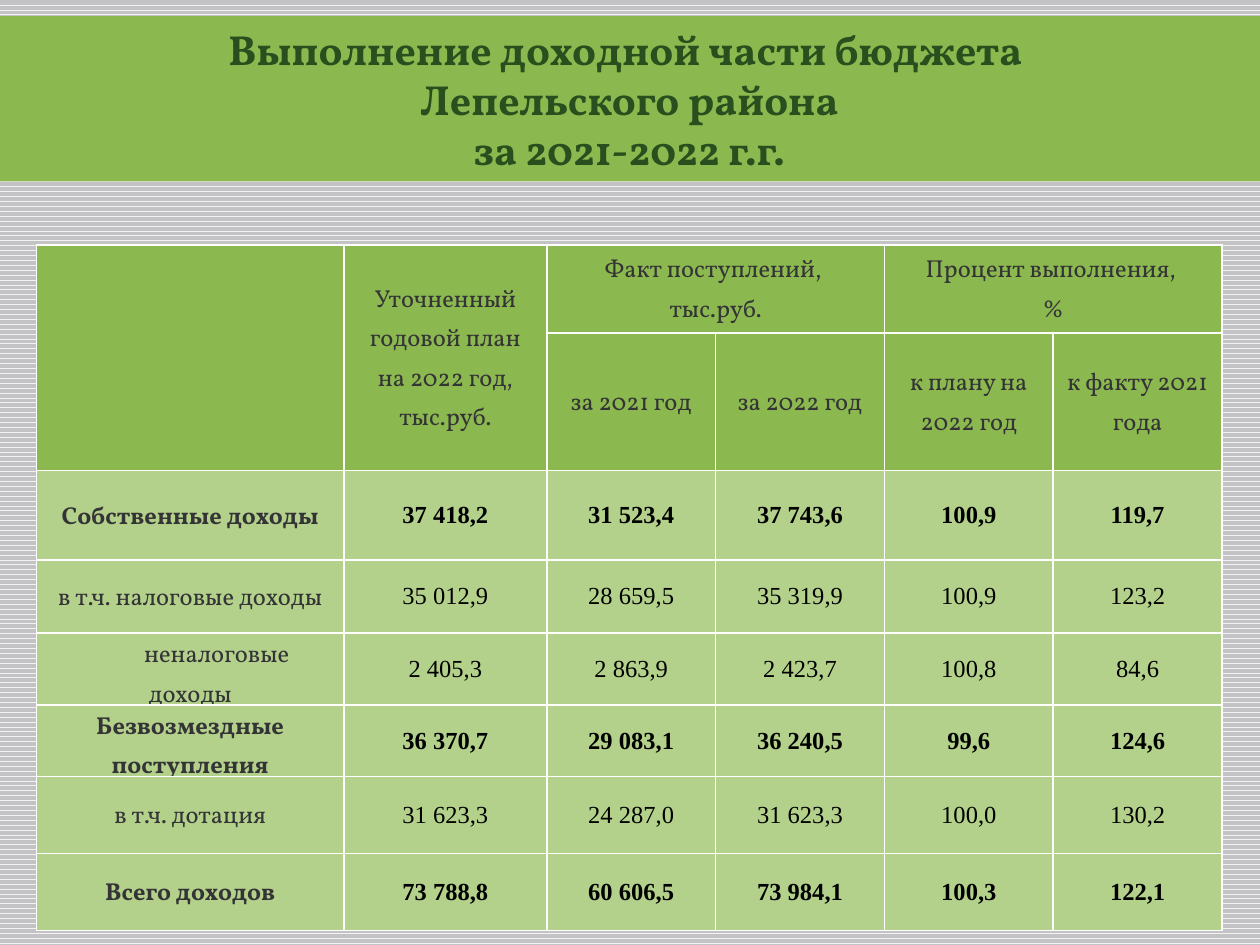
from dataclasses import dataclass
from typing import NamedTuple

from lxml.etree import SubElement
from pptx import Presentation
from pptx.dml.color import RGBColor
from pptx.enum.dml import MSO_PATTERN
from pptx.enum.shapes import MSO_SHAPE
from pptx.enum.text import MSO_ANCHOR, MSO_AUTO_SIZE, PP_ALIGN
from pptx.oxml.ns import qn
from pptx.util import Inches, Pt


@dataclass(frozen=True)
class Theme:
    green: str = "8CB94F"
    light_green: str = "B3D18B"
    title_ink: str = "284F1D"
    label_ink: str = "343436"
    number_ink: str = "000000"
    border: str = "FFFFFF"
    stripe: str = "F2F2F2"
    backdrop: str = "C3C2C5"
    text_font: str = "Vollkorn"
    number_font: str = "Times New Roman"
    title_size: int = 24
    table_size: int = 14
    table_spacing: float = 1.15


class Heading(NamedTuple):
    row: int
    column: int
    rows: int
    columns: int
    lines: tuple[str, ...]


class Income(NamedTuple):
    label: str
    values: tuple[str, ...]
    bold: bool = False
    indent: float = 0


THEME = Theme()
WIDTH, HEIGHT = 10, 7.5
COLUMNS = [2.44, 1.61] + [1.34] * 4
ROWS = [0.7, 1.04, 0.71, 0.58, 0.57, 0.57, 0.61, 0.61]
HEADER_ROWS = 2

TITLE = ("Выполнение доходной части бюджета ", "Лепельского района", "за 2021-2022 г.г.")
HEADINGS = [
    Heading(0, 0, 2, 1, ()),
    Heading(0, 1, 2, 1, ("Уточненный годовой план на 2022 год, тыс.руб.",)),
    Heading(0, 2, 1, 2, ("Факт поступлений, ", "тыс.руб.")),
    Heading(0, 4, 1, 2, ("Процент выполнения, ", "%")),
    Heading(1, 2, 1, 1, ("за 2021 год",)),
    Heading(1, 3, 1, 1, ("за 2022 год",)),
    Heading(1, 4, 1, 1, ("к плану на 2022 год",)),
    Heading(1, 5, 1, 1, ("к факту 2021 года",)),
]
INCOMES = [
    Income("Собственные доходы", ("37 418,2", "31 523,4", "37 743,6", "100,9", "119,7"), bold=True),
    Income("в т.ч. налоговые доходы", ("35 012,9", "28 659,5", "35 319,9", "100,9", "123,2")),
    Income("неналоговые доходы", ("2 405,3", "2 863,9", "2 423,7", "100,8", "84,6"), indent=0.42),
    Income("Безвозмездные поступления", ("36 370,7", "29 083,1", "36 240,5", "99,6", "124,6"), bold=True),
    Income("в т.ч. дотация", ("31 623,3", "24 287,0", "31 623,3", "100,0", "130,2")),
    Income("Всего доходов", ("73 788,8", "60 606,5", "73 984,1", "100,3", "122,1"), bold=True),
]


def rgb(color: str) -> RGBColor:
    return RGBColor.from_string(color)


def write(frame, *lines: str, font: str = THEME.text_font, size: int = THEME.table_size,
          color: str = THEME.label_ink, bold: bool = False, spacing: float = 1.0,
          indent: float = 0) -> None:
    for number, line in enumerate(lines):
        paragraph = frame.paragraphs[0] if number == 0 else frame.add_paragraph()
        paragraph.alignment = PP_ALIGN.CENTER
        paragraph.line_spacing = spacing
        if indent:
            paragraph._p.get_or_add_pPr().set("indent", str(Inches(indent)))
        run = paragraph.add_run()
        run.text = line
        run.font.name, run.font.size, run.font.bold = font, Pt(size), bold
        run.font.color.rgb = rgb(color)


def style_cell(cell, fill: str) -> None:
    cell.vertical_anchor = MSO_ANCHOR.MIDDLE
    cell.margin_top = cell.margin_bottom = Inches(0.01)
    properties = cell._tc.get_or_add_tcPr()
    for side in ("a:lnL", "a:lnR", "a:lnT", "a:lnB"):
        line = SubElement(properties, qn(side), w=str(Pt(1)))
        solid = SubElement(line, qn("a:solidFill"))
        SubElement(solid, qn("a:srgbClr"), val=THEME.border)
    cell.fill.solid()
    cell.fill.fore_color.rgb = rgb(fill)


def draw_background(slide) -> None:
    fill = slide.background.fill
    fill.patterned()
    fill.pattern = MSO_PATTERN.WAVE
    fill.fore_color.rgb = rgb(THEME.stripe)
    fill.back_color.rgb = rgb(THEME.backdrop)


def draw_title(slide) -> None:
    banner = slide.shapes.add_shape(
        MSO_SHAPE.RECTANGLE, Inches(-0.001 * WIDTH), Inches(0.017 * HEIGHT),
        Inches(1.001 * WIDTH), Inches(0.175 * HEIGHT))
    banner.shadow.inherit = False
    banner.fill.solid()
    banner.fill.fore_color.rgb = rgb(THEME.green)
    banner.line.fill.background()
    frame = banner.text_frame
    frame.word_wrap = True
    frame.auto_size = MSO_AUTO_SIZE.SHAPE_TO_FIT_TEXT
    write(frame, *TITLE, size=THEME.title_size, color=THEME.title_ink, bold=True)


def draw_table(slide) -> None:
    table = slide.shapes.add_table(
        len(ROWS), len(COLUMNS), Inches(0.029 * WIDTH), Inches(0.259 * HEIGHT),
        Inches(sum(COLUMNS)), Inches(sum(ROWS))).table
    for column, width in zip(table.columns, COLUMNS):
        column.width = Inches(width)
    for number, (row, height) in enumerate(zip(table.rows, ROWS)):
        row.height = Inches(height)
        for cell in row.cells:
            style_cell(cell, THEME.green if number < HEADER_ROWS else THEME.light_green)

    # Header cells, some spanning two rows or columns
    for heading in HEADINGS:
        cell = table.cell(heading.row, heading.column)
        if heading.rows * heading.columns > 1:
            cell.merge(table.cell(heading.row + heading.rows - 1,
                                  heading.column + heading.columns - 1))
        write(cell.text_frame, *heading.lines, spacing=THEME.table_spacing)

    # Income rows: a label and its figures
    for row, income in enumerate(INCOMES, start=HEADER_ROWS):
        write(table.cell(row, 0).text_frame, income.label, bold=income.bold,
              spacing=THEME.table_spacing, indent=income.indent)
        for column, value in enumerate(income.values, start=1):
            cell = table.cell(row, column)
            cell.margin_left = cell.margin_right = Inches(0.01)
            write(cell.text_frame, value, font=THEME.number_font,
                  color=THEME.number_ink, bold=income.bold)


def main() -> None:
    deck = Presentation()
    deck.slide_width, deck.slide_height = Inches(WIDTH), Inches(HEIGHT)
    slide = deck.slides.add_slide(deck.slide_layouts[6])
    draw_background(slide)
    draw_title(slide)
    draw_table(slide)
    deck.save("out.pptx")


if __name__ == "__main__":
    main()
